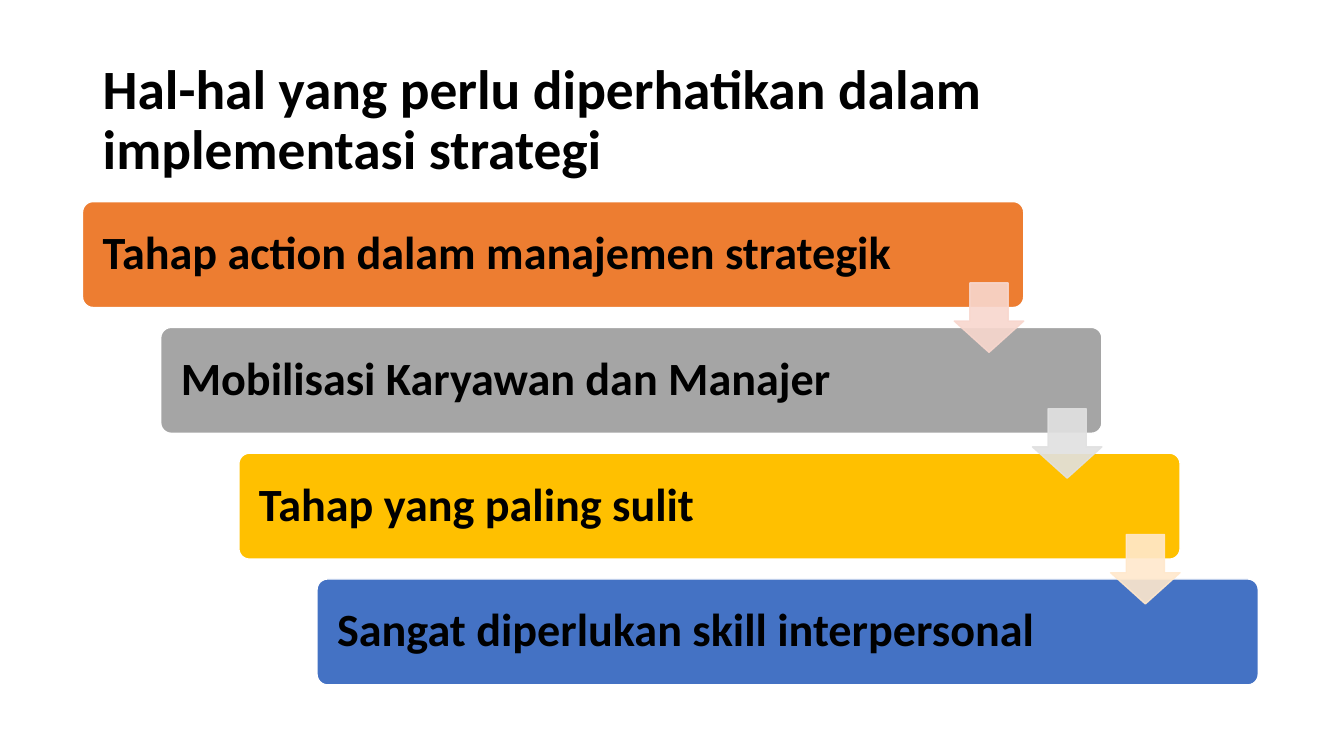
from lxml.etree import SubElement
from pptx import Presentation
from pptx.dml.color import RGBColor
from pptx.enum.shapes import MSO_SHAPE
from pptx.enum.text import MSO_ANCHOR, PP_ALIGN
from pptx.oxml.ns import qn
from pptx.util import Cm, Pt

TITLE = "Hal-hal yang perlu diperhatikan dalam implementasi strategi"
STEPS = [
    ("Tahap action dalam manajemen strategik", "ED7D31", "F8D7CE"),
    ("Mobilisasi Karyawan dan Manajer", "A5A5A5", "E1E1E1"),
    ("Tahap yang paling sulit", "FFC000", "FFE8CC"),
    ("Sangat diperlukan skill interpersonal", "4472C4", None),
]
LEFT, TOP = 2.08, 5.08
SHIFT_X, SHIFT_Y = 1.97, 3.17
BAR_WIDTH, BAR_HEIGHT = 23.72, 2.67
ARROW_SIZE, ARROW_DROP = 1.75, 2.05
FONT = {"name": "Calibri", "bold": True}
FRAME = {"word_wrap": True, "vertical_anchor": MSO_ANCHOR.MIDDLE}
BAR_FRAME = {"margin_left": Cm(0.43), "margin_right": Cm(0.43)}
PARAGRAPH = {"alignment": PP_ALIGN.LEFT, "line_spacing": 0.9}


def apply(target, values):
    for key, value in values.items():
        setattr(target, key, value)


def paint(color_format, color):
    color_format.rgb = RGBColor.from_string(color)


def write(holder, text, size, frame_values):
    frame = holder.text_frame
    apply(frame, FRAME | frame_values)
    paragraph = frame.paragraphs[0]
    apply(paragraph, PARAGRAPH)
    run = paragraph.add_run()
    run.text = text
    apply(run.font, FONT | {"size": Pt(size)})
    paint(run.font.color, "000000")


def draw(slide, kind, box, adjustments, fill, line):
    shape = slide.shapes.add_shape(kind, *map(Cm, box))
    shape.shadow.inherit = False
    for index, value in enumerate(adjustments):
        shape.adjustments[index] = value
    shape.fill.solid()
    paint(shape.fill.fore_color, fill)
    paint(shape.line.color, line)
    shape.line.width = Pt(1)
    return shape


def make_translucent(shape, percent):
    for color in shape._element.spPr.iter(qn("a:srgbClr")):
        SubElement(color, qn("a:alpha"), val=str(percent * 1000))


def main():
    deck = Presentation()
    deck.slide_width, deck.slide_height = Cm(33.87), Cm(19.05)
    slide = deck.slides.add_slide(deck.slide_layouts[6])

    for row, (text, bar_color, _) in enumerate(STEPS):
        box = (LEFT + row * SHIFT_X, TOP + row * SHIFT_Y, BAR_WIDTH, BAR_HEIGHT)
        bar = draw(slide, MSO_SHAPE.ROUNDED_RECTANGLE, box, [0.1], bar_color, "FFFFFF")
        write(bar, text, 33, BAR_FRAME)

    for row, (_, _, arrow_color) in enumerate(STEPS[:-1]):
        x = LEFT + row * SHIFT_X + BAR_WIDTH - ARROW_SIZE
        y = TOP + row * SHIFT_Y + ARROW_DROP
        box = (x, y, ARROW_SIZE, ARROW_SIZE)
        arrow = draw(slide, MSO_SHAPE.DOWN_ARROW, box, [0.55, 0.45], arrow_color, arrow_color)
        make_translucent(arrow, 90)

    title = slide.shapes.add_textbox(Cm(2.34), Cm(1.42), Cm(29.21), Cm(3.28))
    write(title, TITLE, 39.6, {})
    deck.save("out.pptx")


if __name__ == "__main__":
    main()
